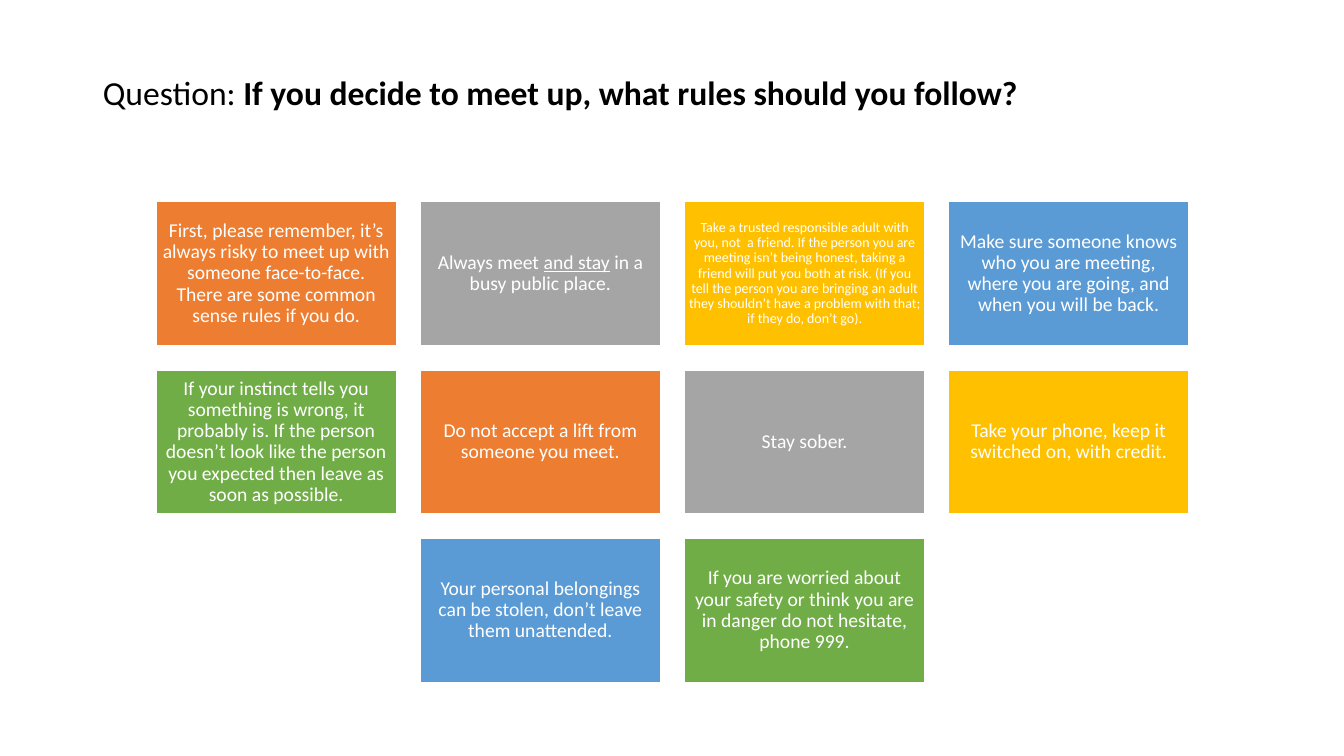
from dataclasses import dataclass

from pptx import Presentation
from pptx.dml.color import RGBColor
from pptx.enum.shapes import MSO_SHAPE as Shape
from pptx.enum.text import MSO_ANCHOR as Anchor, MSO_AUTO_SIZE as AutoSize, PP_ALIGN as Align
from pptx.slide import Slide
from pptx.text.text import TextFrame
from pptx.util import Emu, Pt

EMU_PER_PX = 9144  # 100 px to the inch
SLIDE_W, SLIDE_H = 1333, 750
FONT = "Calibri"
COLORS = {
    "orange": "ED7D31",
    "grey": "A5A5A5",
    "gold": "FFC000",
    "blue": "5B9BD5",
    "green": "70AD47",
    "white": "FFFFFF",
    "black": "000000",
}
CARD_CYCLE = ("orange", "grey", "gold", "blue", "green")

# Card grid
COLUMNS = 4
GRID_LEFT, GRID_TOP = 155, 200
CARD_W, CARD_H, GAP = 238, 143, 24


@dataclass(frozen=True)
class Run:
    text: str
    bold: bool = False
    underline: bool = False


@dataclass(frozen=True)
class Rule:
    runs: tuple[Run, ...]
    size: int = 14
    inset: int = 6


QUESTION = (
    Run("Question: "),
    Run("If you decide to meet up, what rules should you follow?", bold=True),
)
RULES = (
    Rule((Run("First, please remember, it’s always risky to meet up with someone "
              "face-to-face. There are some common sense rules if you do."),)),
    Rule((Run("Always meet "), Run("and stay", underline=True),
          Run(" in a busy public place."))),
    Rule((Run("Take a trusted responsible adult with you, not  a friend. If the person "
              "you are meeting isn’t being honest, taking a friend will put you both at "
              "risk. (If you tell the person you are bringing an adult they shouldn’t "
              "have a problem with that; if they do, don’t go)."),), size=10, inset=4),
    Rule((Run("Make sure someone knows who you are meeting, where you are going, and "
              "when you will be back."),)),
    Rule((Run("If your instinct tells you something is wrong, it probably is. If the "
              "person doesn’t look like the person you expected then leave as soon as "
              "possible."),)),
    Rule((Run("Do not accept a lift from someone you meet."),)),
    Rule((Run("Stay sober."),)),
    Rule((Run("Take your phone, keep it switched on, with credit."),)),
    Rule((Run("Your personal belongings can be stolen, don’t leave them unattended."),)),
    Rule((Run("If you are worried about your safety or think you are in danger do not "
              "hesitate, phone 999."),)),
)


def px(length: int) -> Emu:
    return Emu(length * EMU_PER_PX)


def rgb(color: str) -> RGBColor:
    return RGBColor.from_string(COLORS[color])


def write(frame: TextFrame, runs: tuple[Run, ...], size: int, color: str, align: Align) -> None:
    frame.word_wrap = True
    frame.auto_size = AutoSize.NONE
    frame.vertical_anchor = Anchor.MIDDLE
    paragraph = frame.paragraphs[0]
    paragraph.alignment = align
    paragraph.line_spacing = 0.9
    for part in runs:
        run = paragraph.add_run()
        run.text = part.text
        run.font.name = FONT
        run.font.size = Pt(size)
        run.font.bold = part.bold
        run.font.underline = part.underline
        run.font.color.rgb = rgb(color)


def add_question(slide: Slide) -> None:
    question = slide.shapes.title
    question.left, question.top = px(92), px(40)
    question.width, question.height = px(1150), px(145)
    write(question.text_frame, QUESTION, 24, "black", Align.LEFT)
    # A deeper bottom inset lifts the line above the middle
    question.text_frame.margin_bottom = px(42)


def add_card(slide: Slide, rule: Rule, left: int, top: int, color: str) -> None:
    card = slide.shapes.add_shape(Shape.RECTANGLE, px(left), px(top), px(CARD_W), px(CARD_H))
    card.shadow.inherit = False
    card.fill.solid()
    card.fill.fore_color.rgb = rgb(color)
    card.line.color.rgb = rgb("white")
    card.line.width = Pt(1)
    frame = card.text_frame
    frame.margin_left = frame.margin_right = px(rule.inset)
    frame.margin_top = frame.margin_bottom = px(rule.inset)
    write(frame, rule.runs, rule.size, "white", Align.CENTER)


def add_rules(slide: Slide) -> None:
    for index, rule in enumerate(RULES):
        row, column = divmod(index, COLUMNS)
        # A short last row is centred under the full ones
        in_row = min(COLUMNS, len(RULES) - row * COLUMNS)
        indent = (COLUMNS - in_row) * (CARD_W + GAP) // 2
        left = GRID_LEFT + indent + column * (CARD_W + GAP)
        top = GRID_TOP + row * (CARD_H + GAP)
        add_card(slide, rule, left, top, CARD_CYCLE[index % len(CARD_CYCLE)])


def main() -> None:
    deck = Presentation()
    deck.slide_width, deck.slide_height = px(SLIDE_W), px(SLIDE_H)
    slide = deck.slides.add_slide(deck.slide_layouts.get_by_name("Title Only"))
    add_question(slide)
    add_rules(slide)
    deck.save("out.pptx")


if __name__ == "__main__":
    main()
